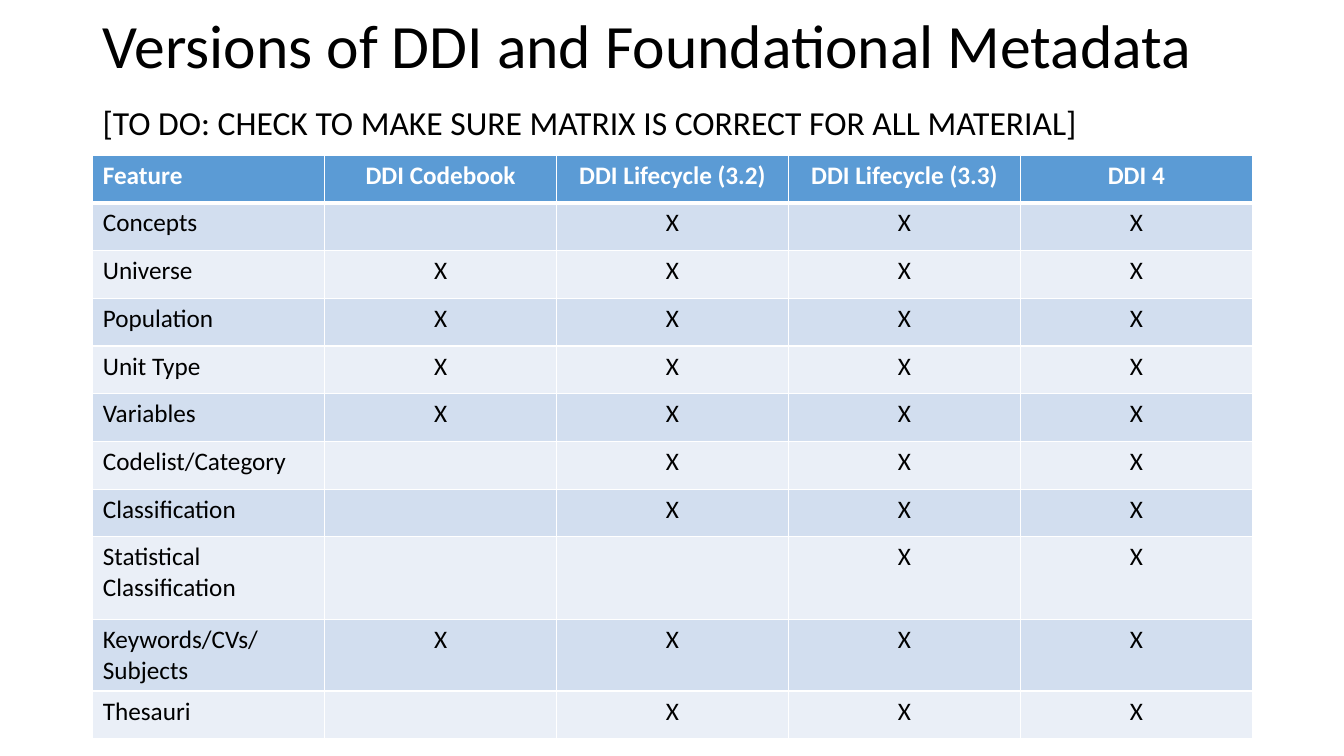
"""Build the slide comparing metadata features across DDI versions."""
from dataclasses import dataclass

from lxml.etree import SubElement
from pptx import Presentation
from pptx.dml.color import RGBColor
from pptx.enum.text import MSO_ANCHOR as Anchor, PP_ALIGN as Align
from pptx.oxml import parse_xml
from pptx.oxml.ns import nsdecls, qn
from pptx.util import Inches, Pt

TITLE = "Versions of DDI and Foundational Metadata"
NOTE = "[TO DO: CHECK TO MAKE SURE MATRIX IS CORRECT FOR ALL MATERIAL]"
VERSIONS = ["DDI Codebook", "DDI Lifecycle (3.2)", "DDI Lifecycle (3.3)", "DDI 4"]
FIRST_SUPPORT = [
    ("Concepts", "DDI Lifecycle (3.2)"),
    ("Universe", "DDI Codebook"),
    ("Population", "DDI Codebook"),
    ("Unit Type", "DDI Codebook"),
    ("Variables", "DDI Codebook"),
    ("Codelist/Category", "DDI Lifecycle (3.2)"),
    ("Classification", "DDI Lifecycle (3.2)"),
    ("Statistical Classification", "DDI Lifecycle (3.3)"),
    ("Keywords/CVs/Subjects", "DDI Codebook"),
    ("Thesauri", "DDI Lifecycle (3.2)"),
]
TALL_ROWS = {"Statistical Classification": 0.82, "Keywords/CVs/Subjects": 0.71}
LEFT, WIDTH = 0.92, 11.5
TITLE_TOP, TITLE_HEIGHT = 0.09, 1.45
TABLE_TOP, TABLE_HEIGHT = 1.54, 5.79


@dataclass(frozen=True)
class Theme:
    font: str = "Calibri"
    title_size: int = 44
    note_size: int = 24
    cell_size: int = 18
    ink: str = "000000"
    paper: str = "FFFFFF"
    header: str = "5B9BD5"
    bands: tuple = ("D2DEEF", "EAEFF7")
    thin: int = 1
    thick: int = 3


THEME = Theme()


def style_font(font, size, color, bold=False):
    font.name = THEME.font
    font.size = Pt(size)
    font.bold = bold
    font.color.rgb = RGBColor.from_string(color)


def add_title(slide):
    box = slide.shapes.add_textbox(
        Inches(LEFT), Inches(TITLE_TOP), Inches(WIDTH), Inches(TITLE_HEIGHT))
    frame = box.text_frame
    frame.word_wrap = True
    frame.vertical_anchor = Anchor.MIDDLE
    para = frame.paragraphs[0]
    para.line_spacing = 0.9
    for text, size in [(TITLE, THEME.title_size), (NOTE, THEME.note_size),
                       (" ", THEME.title_size)]:
        span = para.add_run()
        span.text = text
        style_font(span.font, size, THEME.ink)
        if text == TITLE:
            para.add_line_break()


def set_borders(cell, top, bottom):
    properties = cell._tc.get_or_add_tcPr()
    widths = {"lnL": THEME.thin, "lnR": THEME.thin, "lnT": top, "lnB": bottom}
    for index, (side, width) in enumerate(widths.items()):
        line = parse_xml(f'<a:{side} {nsdecls("a")} w="{Pt(width)}"/>')
        fill = SubElement(line, qn("a:solidFill"))
        SubElement(fill, qn("a:srgbClr"), val=THEME.paper)
        properties.insert(index, line)


def fill_cell(cell, text, row, column):
    is_header = row == 0
    fill = THEME.header if is_header else THEME.bands[(row - 1) % 2]
    cell.fill.solid()
    cell.fill.fore_color.rgb = RGBColor.from_string(fill)
    set_borders(cell, THEME.thick if row == 1 else THEME.thin,
                THEME.thick if is_header else THEME.thin)
    cell.text = text
    para = cell.text_frame.paragraphs[0]
    para.alignment = Align.CENTER if column else Align.LEFT
    style_font(para.font, THEME.cell_size,
               THEME.paper if is_header else THEME.ink, is_header)


def add_matrix(slide):
    rows = [["Feature", *VERSIONS]]
    for feature, first in FIRST_SUPPORT:
        start = VERSIONS.index(first)
        rows.append([feature] + ["X" if index >= start else ""
                                 for index in range(len(VERSIONS))])
    columns = len(rows[0])
    table = slide.shapes.add_table(
        len(rows), columns, Inches(LEFT), Inches(TABLE_TOP),
        Inches(WIDTH), Inches(TABLE_HEIGHT)).table
    for column in table.columns:
        column.width = Inches(WIDTH / columns)
    plain_height = ((TABLE_HEIGHT - sum(TALL_ROWS.values()))
                    / (len(rows) - len(TALL_ROWS)))
    for row, texts in enumerate(rows):
        table.rows[row].height = Inches(TALL_ROWS.get(texts[0], plain_height))
        for column, text in enumerate(texts):
            fill_cell(table.cell(row, column), text, row, column)


def main():
    deck = Presentation()
    deck.slide_width, deck.slide_height = Inches(13.33), Inches(7.5)
    slide = deck.slides.add_slide(deck.slide_layouts[6])
    add_title(slide)
    add_matrix(slide)
    deck.save("out.pptx")


if __name__ == "__main__":
    main()
